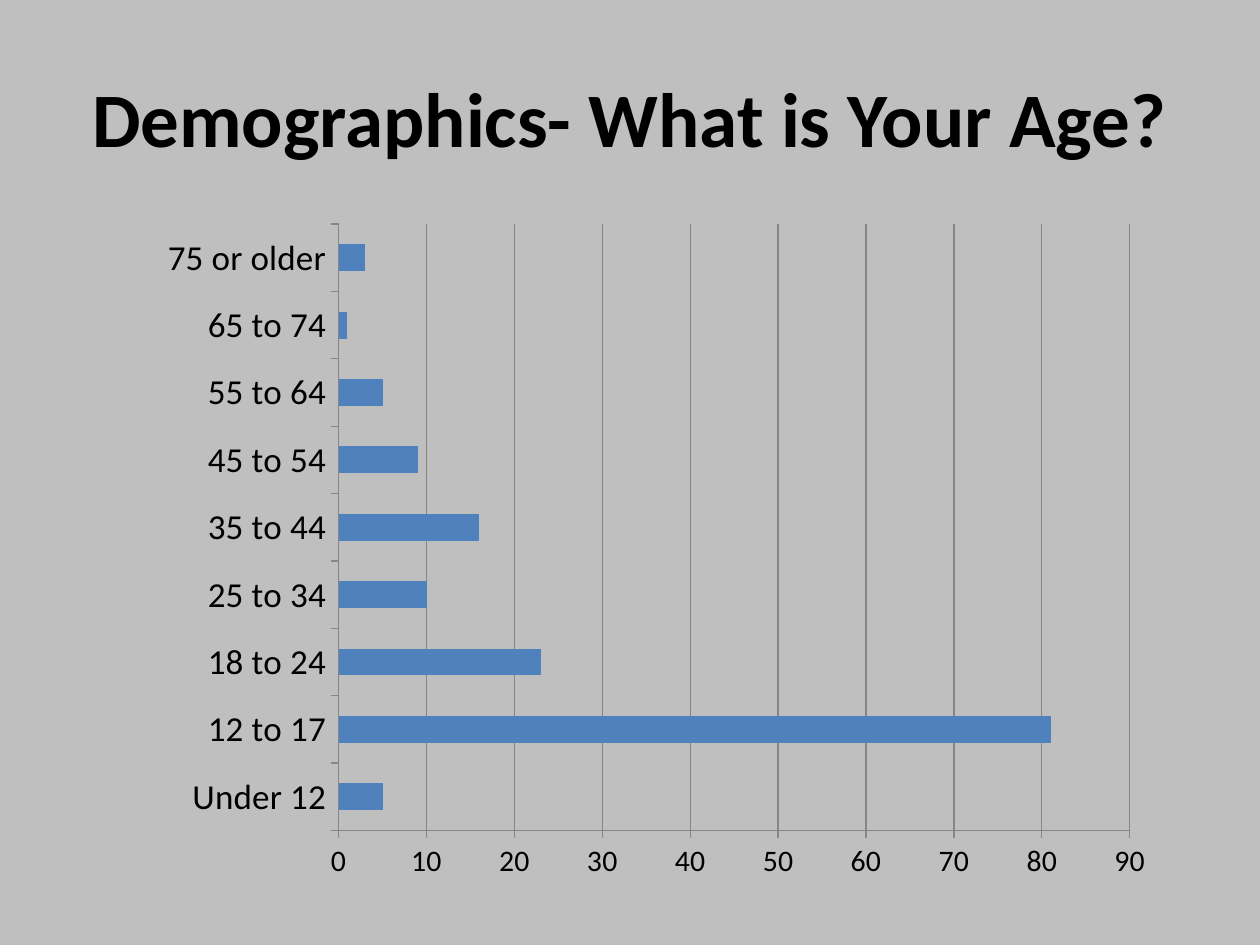
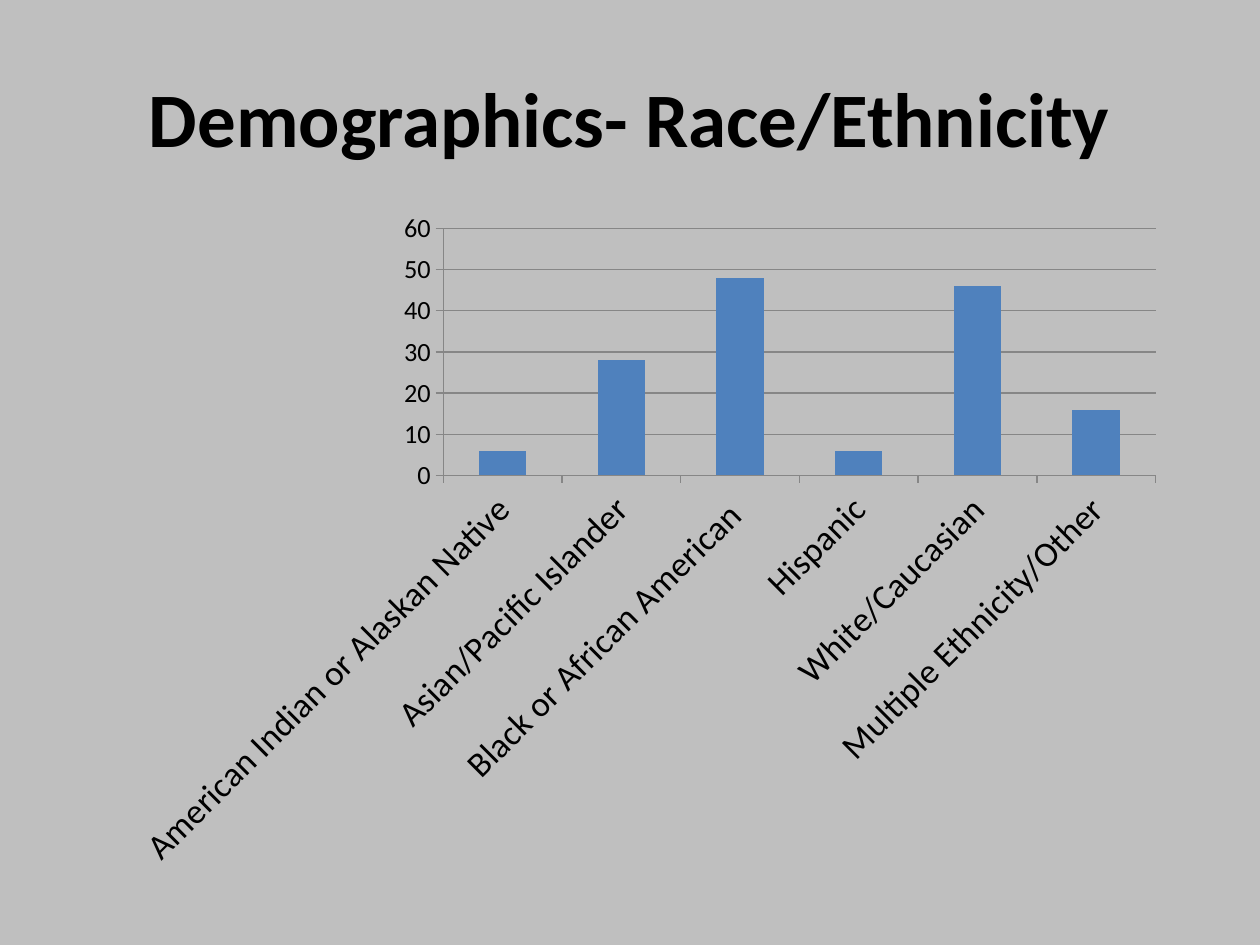
from dataclasses import dataclass

from pptx import Presentation
from pptx.chart.data import CategoryChartData
from pptx.dml.color import RGBColor
from pptx.enum.chart import XL_CHART_TYPE, XL_TICK_MARK
from pptx.enum.text import MSO_ANCHOR, PP_ALIGN
from pptx.util import Inches, Pt

BAR, COLUMN = XL_CHART_TYPE.BAR_CLUSTERED, XL_CHART_TYPE.COLUMN_CLUSTERED
TICK_OUT = XL_TICK_MARK.OUTSIDE
MIDDLE, CENTER = MSO_ANCHOR.MIDDLE, PP_ALIGN.CENTER
TITLE_ONLY = 5


@dataclass(frozen=True)
class Theme:
    """Colours, type and line sizes shared by the slides."""
    font: str = "Calibri"
    background: RGBColor = RGBColor(0xBF, 0xBF, 0xBF)
    text: RGBColor = RGBColor(0, 0, 0)
    bar: RGBColor = RGBColor(0x4F, 0x81, 0xBD)
    rule: RGBColor = RGBColor(0x86, 0x86, 0x86)
    title_size: int = 44
    chart_size: int = 10
    category_size: int = 20
    rule_width: float = 0.75


THEME = Theme()
TITLE_BOX = (0.5, 0.3, 9, 1.25)

AGES = {
    "Under 12": 5, "12 to 17": 81, "18 to 24": 23,
    "25 to 34": 10, "35 to 44": 16, "45 to 54": 9,
    "55 to 64": 5, "65 to 74": 1, "75 or older": 3,
}
ETHNICITIES = {
    "American Indian or Alaskan Native": 6,
    "Asian/Pacific Islander": 28,
    "Black or African American ": 48,
    "Hispanic": 6,
    "White/Caucasian": 46,
    "Multiple Ethnicity/Other": 16,
}


def style_font(font, size, bold=False):
    """Apply the theme's typeface and text colour at the given size."""
    font.name, font.size, font.bold = THEME.font, Pt(size), bold
    font.color.rgb = THEME.text


def write_text(tf, text, size, bold=False, align=CENTER, anchor=MIDDLE):
    """Fill a text frame with one formatted paragraph."""
    tf.word_wrap = True
    tf.vertical_anchor = anchor
    p = tf.paragraphs[0]
    p.alignment = align
    r = p.add_run()
    r.text = text
    style_font(r.font, size, bold)


def style_rule(line):
    """Draw an axis or grid line in the theme's rule style."""
    line.color.rgb = THEME.rule
    line.width = Pt(THEME.rule_width)


def style_axis(axis, size, grid=False):
    """Format an axis line, its ticks, labels and gridlines."""
    axis.major_tick_mark = TICK_OUT
    axis.has_major_gridlines = grid
    style_rule(axis.format.line)
    style_font(axis.tick_labels.font, size)
    if grid:
        style_rule(axis.major_gridlines.format.line)


def add_bar_chart(s, box, kind, counts, top, value_size, label_angle=0):
    """Add a single-series bar or column chart in the given box."""
    data = CategoryChartData()
    data.categories = list(counts)
    data.add_series("Series 1", list(counts.values()))
    chart = s.shapes.add_chart(kind, *map(Inches, box), data).chart
    chart.has_legend = chart.has_title = False
    style_font(chart.font, THEME.chart_size)

    plot = chart.plots[0]
    plot.gap_width = 150
    plot.vary_by_categories = False
    fill = plot.series[0].format.fill
    fill.solid()
    fill.fore_color.rgb = THEME.bar

    style_axis(chart.category_axis, THEME.category_size)
    style_axis(chart.value_axis, value_size, grid=True)
    chart.value_axis.minimum_scale = 0
    chart.value_axis.maximum_scale = top
    chart.value_axis.major_unit = 10
    if label_angle:
        body = chart.category_axis._element.txPr.bodyPr
        body.set("rot", str(label_angle * 60000))
        body.set("vert", "horz")


def add_chart_slide(prs, title, box, **chart_options):
    """Add a titled slide holding one chart."""
    s = prs.slides.add_slide(prs.slide_layouts[TITLE_ONLY])
    fill = s.background.fill
    fill.solid()
    fill.fore_color.rgb = THEME.background
    sp = s.shapes.title
    sp.left, sp.top, sp.width, sp.height = map(Inches, TITLE_BOX)
    write_text(sp.text_frame, title, THEME.title_size, bold=True)
    add_bar_chart(s, box, **chart_options)


def main():
    """Build and save the demographics slides."""
    prs = Presentation()
    prs.slide_width, prs.slide_height = Inches(10), Inches(7.5)
    add_chart_slide(prs, "Demographics- What is Your Age?",
                    (1.17, 1.67, 8.08, 5.42),
                    kind=BAR, counts=AGES, top=90, value_size=17)
    add_chart_slide(prs, "Demographics- Race/Ethnicity",
                    (0.92, 1.58, 8.42, 5.42),
                    kind=COLUMN, counts=ETHNICITIES, top=60, value_size=15,
                    label_angle=-45)
    prs.save("out.pptx")


if __name__ == "__main__":
    main()
